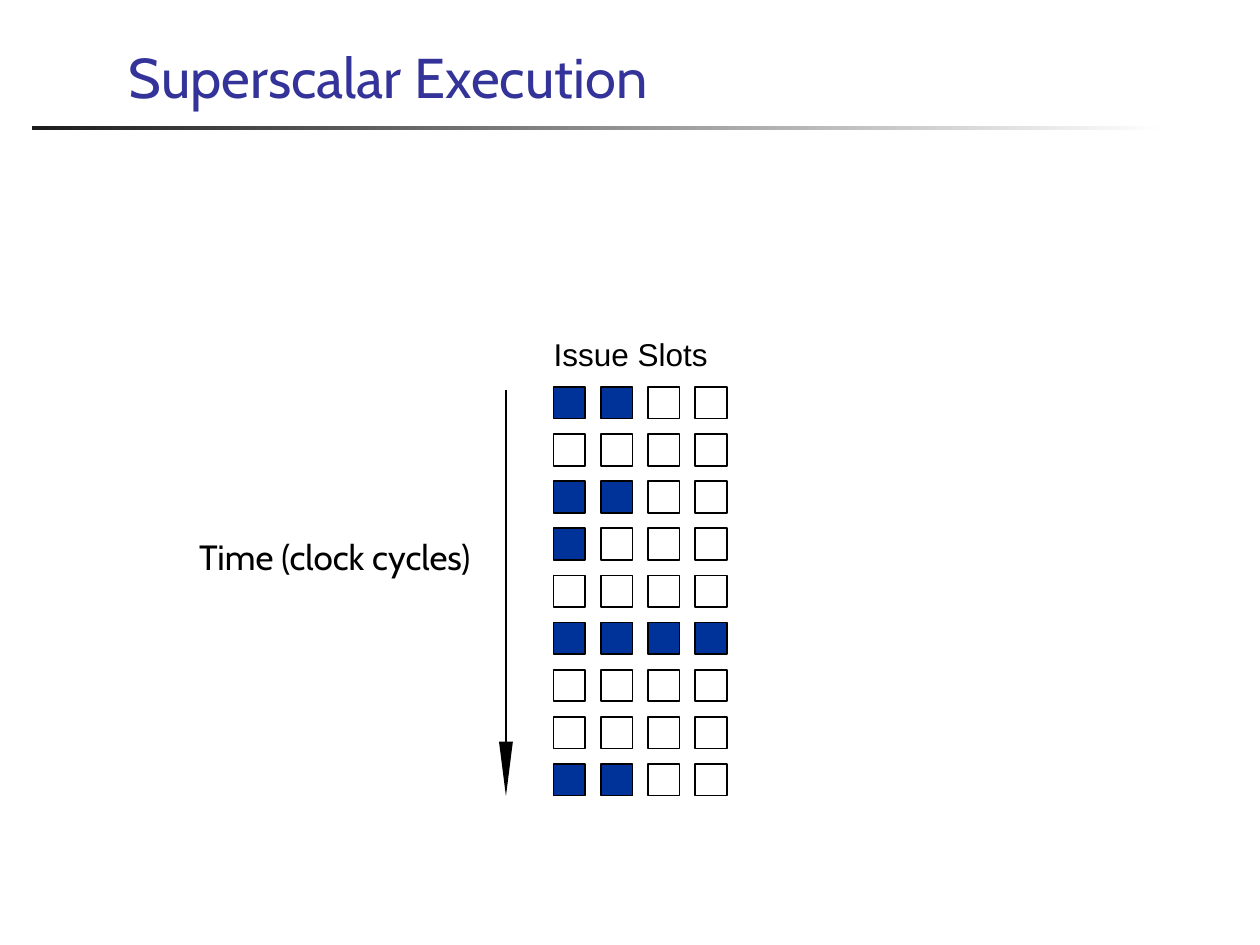
from lxml.etree import SubElement
from pptx import Presentation
from pptx.dml.color import RGBColor
from pptx.enum.shapes import MSO_CONNECTOR, MSO_SHAPE
from pptx.enum.text import MSO_ANCHOR, MSO_AUTO_SIZE, PP_ALIGN
from pptx.oxml.ns import qn
from pptx.util import Cm, Pt

BLACK, WHITE, BLUE = "000000", "FFFFFF", "003399"
SLOT_ROWS = ["XX..", "....", "XX..", "X...", "....", "XXXX", "....", "....", "XX.."]
SLOT_SIZE, SLOT_PITCH = 0.64, 0.95


def color(value):
    return RGBColor.from_string(value)


def place(shape, left, top, width, height):
    bounds = {"left": left, "top": top, "width": width, "height": height}
    for name, value in bounds.items():
        setattr(shape, name, Cm(value))


def write(box, text, font, size, fill, frame_format):
    frame = box.text_frame
    for name, value in frame_format.items():
        setattr(frame, name, value)
    paragraph = frame.paragraphs[0]
    paragraph.alignment = PP_ALIGN.LEFT
    paragraph.space_before = Pt(0)
    span = paragraph.add_run()
    span.text = text
    for name, value in {"name": font, "size": Pt(size)}.items():
        setattr(span.font, name, value)
    span.font.color.rgb = color(fill)
    return paragraph


def add_header(page, left, top, width, height):
    title = page.shapes.title
    place(title, left + 1.7, top, width - 1.27, height)
    write(title, "Superscalar Execution", "Cabin", 32, "333399",
          {"vertical_anchor": MSO_ANCHOR.BOTTOM, "auto_size": MSO_AUTO_SIZE.NONE})
    rule = page.shapes.add_shape(MSO_SHAPE.RECTANGLE, Cm(left), Cm(top + height + 0.2),
                                 Cm(width), Cm(0.08))
    rule.shadow.inherit = False
    rule.line.fill.background()
    rule.fill.gradient()
    rule.fill.gradient_angle = 0
    for stop, position, shade in zip(rule.fill.gradient_stops, (0, 1), ("1C1C1C", WHITE)):
        stop.position = position
        stop.color.rgb = color(shade)


def add_time_label(page, left, top, width, height):
    body = page.placeholders[1]
    place(body, left, top, width, height)
    paragraph = write(body, "Time (clock cycles)", "Cabin", 20, BLACK,
                      {"vertical_anchor": MSO_ANCHOR.TOP, "auto_size": MSO_AUTO_SIZE.NONE})
    paragraph.line_spacing = 0.9
    properties = paragraph._p.get_or_add_pPr()
    properties.set("marL", str(Cm(0.95)))
    properties.set("indent", str(Cm(-0.95)))
    SubElement(properties, qn("a:buNone"))


def add_time_arrow(page, left, top, width, height):
    center, bottom = left + width / 2, top + height
    head_top = bottom - 1.1
    shaft = page.shapes.add_connector(MSO_CONNECTOR.STRAIGHT, Cm(center), Cm(top),
                                      Cm(center), Cm(bottom - 0.3))
    shaft.line.color.rgb = color(BLACK)
    shaft.line.width = Pt(1)
    SubElement(shaft._element.spPr, qn("a:effectLst"))
    builder = page.shapes.build_freeform(Cm(center), Cm(bottom))
    builder.add_line_segments([(Cm(left), Cm(head_top)), (Cm(left + width), Cm(head_top))])
    head = builder.convert_to_shape()
    head.shadow.inherit = False
    head.fill.solid()
    head.fill.fore_color.rgb = color(BLACK)
    head.line.fill.background()


def add_issue_slots(page, left, top, width, heading_height):
    heading = page.shapes.add_textbox(Cm(left), Cm(top), Cm(width), Cm(heading_height))
    margins = {f"margin_{side}": 0 for side in ("left", "top", "right", "bottom")}
    write(heading, "Issue Slots", "Arial", 18, BLACK,
          {**margins, "word_wrap": False, "auto_size": MSO_AUTO_SIZE.SHAPE_TO_FIT_TEXT})
    grid_top = top + heading_height + 0.15
    for row, slots in enumerate(SLOT_ROWS):
        for column, state in enumerate(slots):
            slot = page.shapes.add_shape(
                MSO_SHAPE.RECTANGLE, Cm(left + column * SLOT_PITCH),
                Cm(grid_top + row * SLOT_PITCH), Cm(SLOT_SIZE), Cm(SLOT_SIZE))
            slot.shadow.inherit = False
            slot.fill.solid()
            slot.fill.fore_color.rgb = color(BLUE if state == "X" else WHITE)
            slot.line.color.rgb = color(BLACK)
            slot.line.width = Pt(1)


def main():
    deck = Presentation()
    deck.slide_width, deck.slide_height = Cm(25.4), Cm(19.05)
    page = deck.slides.add_slide(deck.slide_layouts[1])
    add_header(page, 0.64, 0, 22.86, 2.34)
    add_time_label(page, 3.76, 10.77, 8.36, 1.04)
    add_issue_slots(page, 11.16, 6.76, 3.33, 0.89)
    add_time_arrow(page, 10.06, 7.87, 0.28, 8.18)
    deck.save("out.pptx")


if __name__ == "__main__":
    main()
